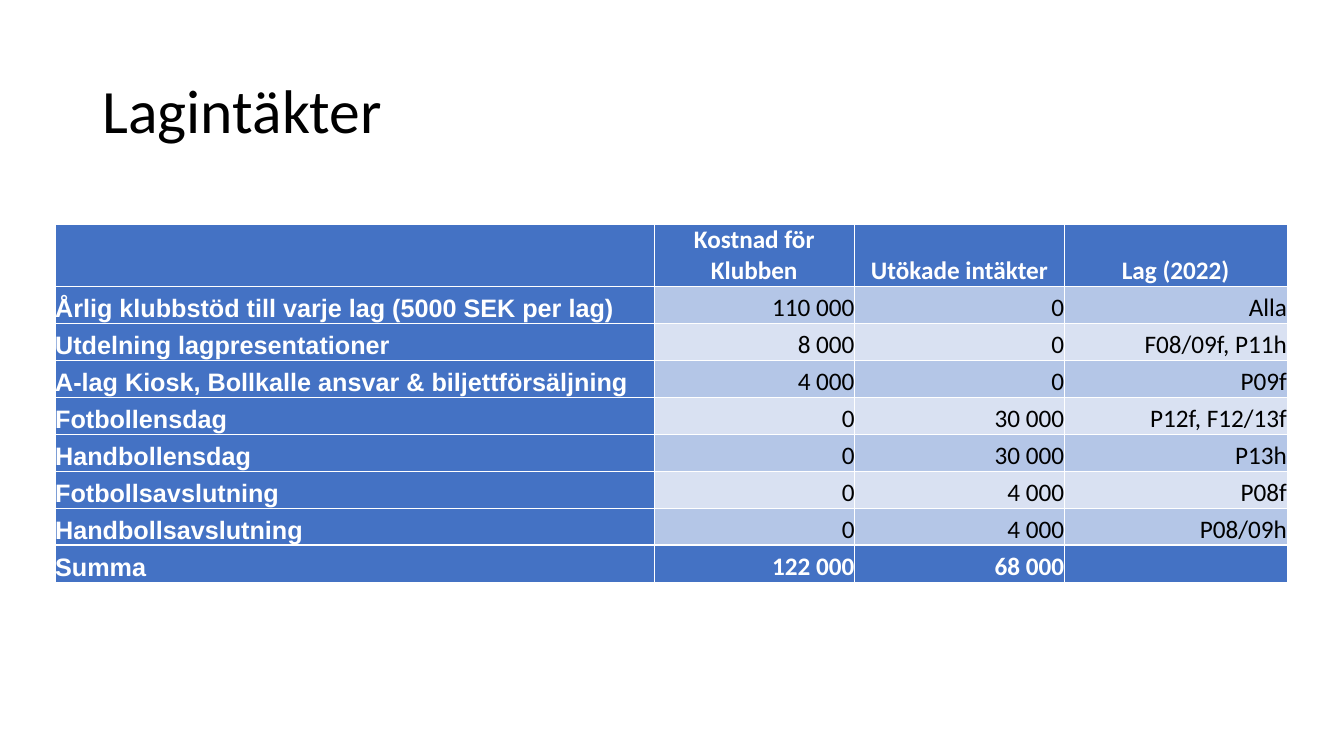
from lxml import etree
from pptx import Presentation
from pptx.dml.color import RGBColor
from pptx.enum import text as t
from pptx.oxml import ns
from pptx.util import Pt

COLOURS = {"band_dark": "B4C6E7", "band_light": "D9E1F2", "accent": "4472C4",
           "white": "FFFFFF", "black": "000000"}
COLUMN_WIDTHS = [427.7, 143.3, 149.8, 159.1]
HEADER_HEIGHT, ROW_HEIGHT = 44, 26.4
INCOME_ROWS = [
    ("", "Kostnad för Klubben", "Utökade intäkter", "Lag (2022)"),
    ("Årlig klubbstöd till varje lag (5000 SEK per lag)", "110 000", "0", "Alla"),
    ("Utdelning lagpresentationer", "8 000", "0", "F08/09f, P11h"),
    ("A-lag Kiosk, Bollkalle ansvar & biljettförsäljning", "4 000", "0", "P09f"),
    ("Fotbollensdag", "0", "30 000", "P12f, F12/13f"),
    ("Handbollensdag", "0", "30 000", "P13h"),
    ("Fotbollsavslutning", "0", "4 000", "P08f"),
    ("Handbollsavslutning", "0", "4 000", "P08/09h"),
    ("Summa", "122 000", "68 000", ""),
]


def add_words(paragraph, words, size, face, colour, bold=False):
    run = paragraph.add_run()
    run.text = words
    run.font.size = Pt(size)
    run.font.name = face
    run.font.bold = bold
    run.font.color.rgb = RGBColor.from_string(COLOURS[colour])


def set_borders(cell, widths):
    properties = cell._tc.get_or_add_tcPr()
    for side, width in widths.items():
        line = etree.SubElement(properties, ns.qn(f"a:ln{side}"), w=str(Pt(width)))
        fill = etree.SubElement(line, ns.qn("a:solidFill"))
        etree.SubElement(fill, ns.qn("a:srgbClr"), val=COLOURS["white"])


def place_heading(slide, left, top, width, height):
    heading = slide.shapes.title
    heading.left, heading.top = Pt(left), Pt(top)
    heading.width, heading.height = Pt(width), Pt(height)
    frame = heading.text_frame
    frame.word_wrap = True
    frame.auto_size = t.MSO_AUTO_SIZE.NONE
    frame.vertical_anchor = t.MSO_ANCHOR.MIDDLE
    paragraph = frame.paragraphs[0]
    paragraph.alignment = t.PP_ALIGN.LEFT
    paragraph.line_spacing = 0.9
    add_words(paragraph, "Lagintäkter", 44, "Calibri", "black")


def fill_cell(cell, words, row, column):
    last = len(INCOME_ROWS) - 1
    framed = row in (0, last) or column == 0
    band = "band_dark" if row % 2 else "band_light"
    set_borders(cell, {"L": 0.5, "R": 0.5,
                       "T": 1.5 if row == last else 0.5,
                       "B": 1.5 if row == last - 1 else 0.5})
    cell.fill.solid()
    cell.fill.fore_color.rgb = RGBColor.from_string(COLOURS["accent" if framed else band])
    cell.margin_left = cell.margin_right = cell.margin_top = cell.margin_bottom = 0
    cell.vertical_anchor = t.MSO_ANCHOR.BOTTOM
    if not words:
        return
    paragraph = cell.text_frame.paragraphs[0]
    if column == 0:
        paragraph.alignment = t.PP_ALIGN.LEFT
    else:
        paragraph.alignment = t.PP_ALIGN.RIGHT if row else t.PP_ALIGN.CENTER
    add_words(paragraph, words, 18, "Arial" if column == 0 else "Calibri",
              "white" if framed else "black", framed)


def place_income(slide, left, top):
    heights = [HEADER_HEIGHT] + [ROW_HEIGHT] * (len(INCOME_ROWS) - 1)
    income = slide.shapes.add_table(len(heights), len(COLUMN_WIDTHS), Pt(left), Pt(top),
                                    Pt(sum(COLUMN_WIDTHS)), Pt(sum(heights))).table
    for column, width in zip(income.columns, COLUMN_WIDTHS):
        column.width = Pt(width)
    for row, height in zip(income.rows, heights):
        row.height = Pt(height)
    for r, entries in enumerate(INCOME_ROWS):
        for c, words in enumerate(entries):
            fill_cell(income.cell(r, c), words, r, c)


def main():
    deck = Presentation()
    deck.slide_width, deck.slide_height = Pt(960), Pt(540)
    slide = deck.slides.add_slide(deck.slide_layouts[5])
    place_heading(slide, 66, 28.75, 828, 104.4)
    place_income(slide, 39.4, 160.5)
    deck.save("out.pptx")


if __name__ == "__main__":
    main()
